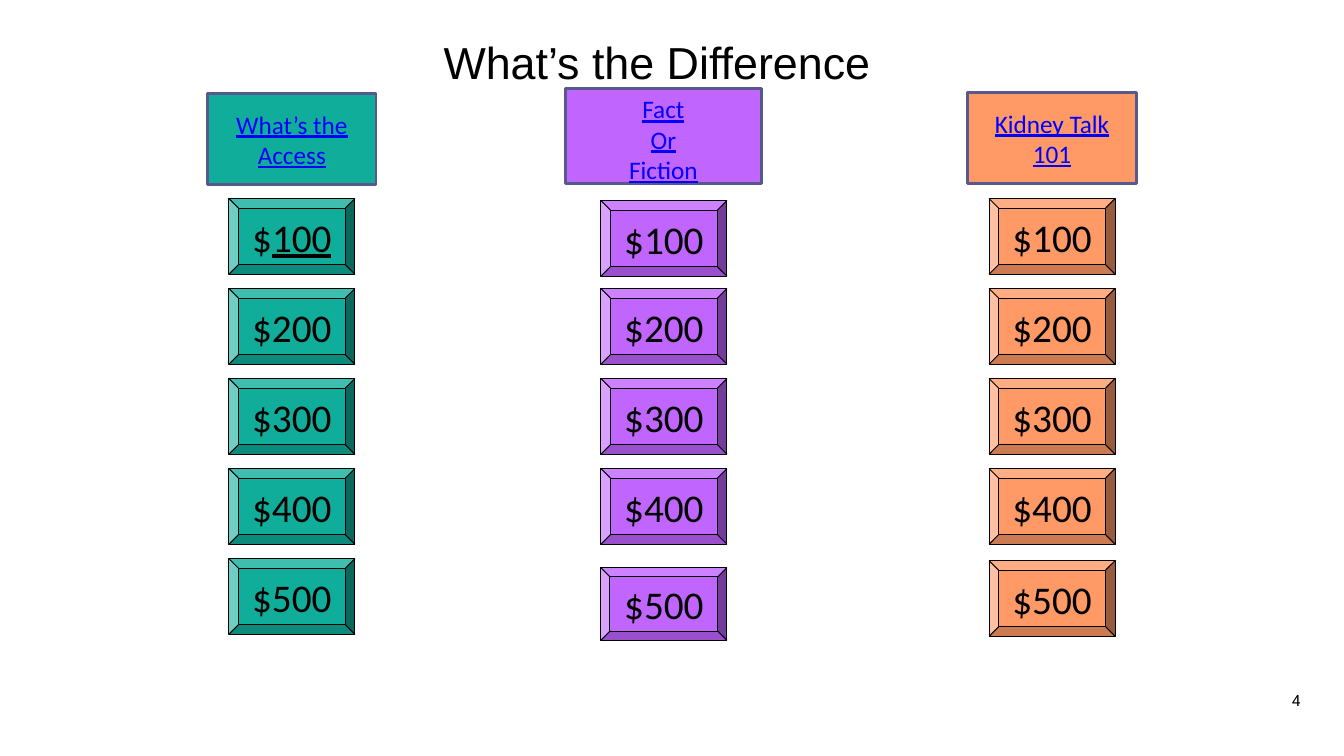
from pptx import Presentation
from pptx import util as u
from pptx.dml.color import RGBColor
from pptx.enum import shapes, text

HUES = {"teal": "10AD9B", "violet": "C165FF", "orange": "FF9966",
        "edge": "57598C", "link": "0000FF", "ink": "000000"}
WIDE, HIGH = 13.33, 7.5
TOP, STEP = 1.97, 0.893       # first price row and row pitch
TILE_W, TILE_H = 1.25, 0.75
MID, UP = text.MSO_ANCHOR.MIDDLE, text.MSO_ANCHOR.TOP

# Left, top, width, height of header; header lines; anchor; tile left;
# shifts of single rows as {row: (down, taller)}
COLUMNS = [
    ("teal", (2.06, 0.93, 1.67, 0.9), "What’s the Access", MID, 2.27, {}),
    ("violet", (5.61, 0.88, 1.94, 0.94), "Fact\nOr\nFiction", UP, 5.96,
     {0: (0.02, 0), 4: (0.09, -0.03)}),
    ("orange", (9.6, 0.92, 1.67, 0.9), "Kidney Talk 101", MID, 9.81,
     {4: (0.02, 0)}),
]


def hue(name):
    return RGBColor.from_string(HUES[name])


def inches(box):
    return [u.Inches(n) for n in box]


def style(frame, font, size, ink, anchor=MID, line=None):
    frame.word_wrap = True
    frame.vertical_anchor = anchor
    for para in frame.paragraphs:
        para.alignment = text.PP_ALIGN.CENTER
        for run in para.runs:
            run.font.name, run.font.size = font, u.Pt(size)
            run.font.color.rgb = hue(ink)
            run.font.underline = line


def block(slide, kind, box, fill, edge, width):
    shape = slide.shapes.add_shape(kind, *inches(box))
    shape.shadow.inherit = False
    shape.fill.solid()
    shape.fill.fore_color.rgb = hue(fill)
    shape.line.color.rgb = hue(edge)
    shape.line.width = u.Pt(width)
    return shape


def heading(slide, box, words):
    title = slide.shapes.title
    title.left, title.top, title.width, title.height = inches(box)
    title.text_frame.text = words
    style(title.text_frame, "Arial", 32, "ink")


def header(slide, box, fill, words, anchor):
    shape = block(slide, shapes.MSO_SHAPE.RECTANGLE, box, fill, "edge", 2)
    shape.text_frame.text = words
    style(shape.text_frame, "Calibri", 18, "link", anchor, True)


def prices(slide, left, fill, shifts):
    for row in range(5):
        down, taller = shifts.get(row, (0, 0))
        box = (left, TOP + row * STEP + down, TILE_W, TILE_H + taller)
        tile = block(slide, shapes.MSO_SHAPE.BEVEL, box, fill, "ink", 0.75)
        para = tile.text_frame.paragraphs[0]
        para.add_run().text = "$"
        para.add_run().text = str(100 * (row + 1))
        style(tile.text_frame, "Calibri", 28, "ink")
        # The first teal amount is underlined
        if fill == "teal" and row == 0:
            para.runs[1].font.underline = True


def number(slide, box, words):
    frame = slide.shapes.add_textbox(*inches(box)).text_frame
    frame.text = words
    frame.margin_left = frame.margin_right = u.Inches(0.04)
    frame.margin_top = frame.margin_bottom = u.Inches(0.04)
    style(frame, "Roboto", 11, "ink", UP)


def main():
    deck = Presentation()
    deck.slide_width, deck.slide_height = inches((WIDE, HIGH))
    slide = deck.slides.add_slide(deck.slide_layouts[5])
    heading(slide, (2.5, 0.29, 8.16, 0.64), "What’s the Difference ")
    # Game board
    for fill, box, words, anchor, left, shifts in COLUMNS:
        header(slide, box, fill, words, anchor)
        prices(slide, left, fill, shifts)
    number(slide, (12.72, 6.82, 0.27, 0.26), "4")
    deck.save("out.pptx")


if __name__ == "__main__":
    main()
